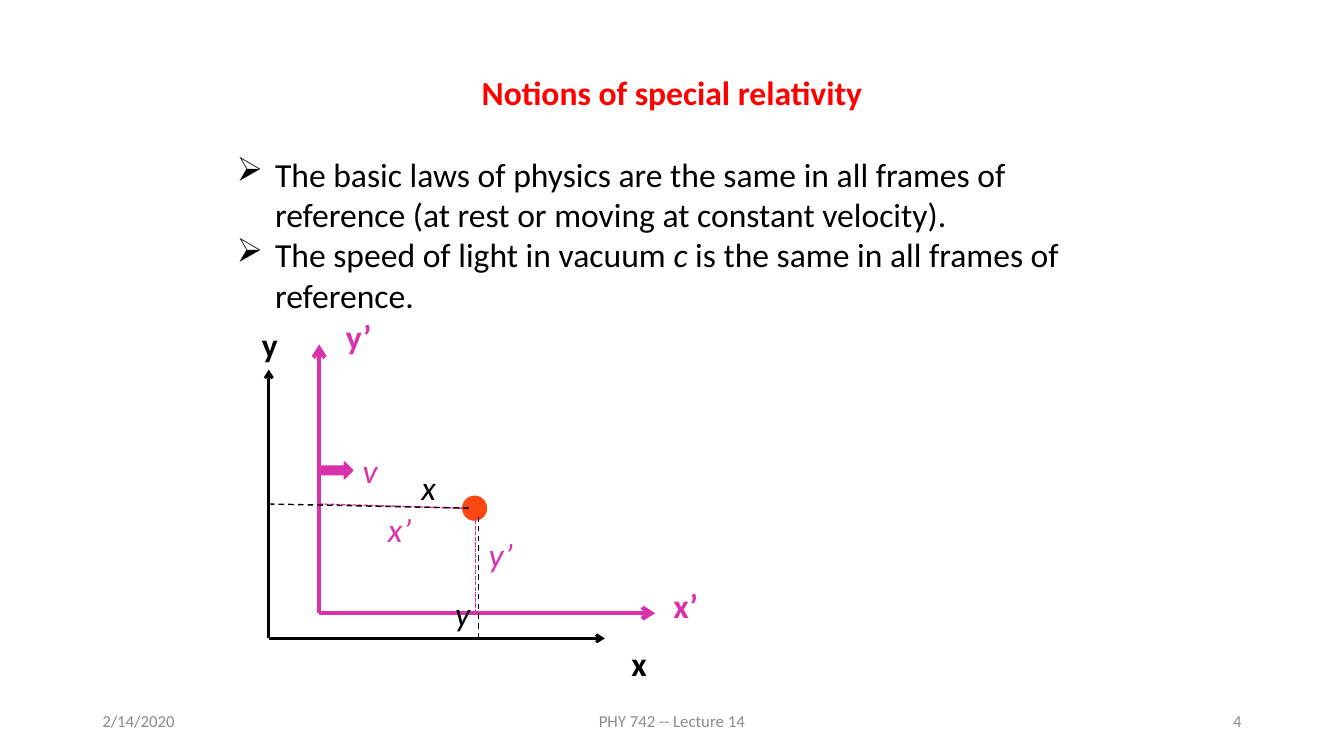
from lxml.etree import SubElement
from pptx import Presentation
from pptx.dml.color import RGBColor
from pptx.enum.dml import MSO_LINE_DASH_STYLE as Dash
from pptx.enum.shapes import MSO_CONNECTOR_TYPE as Connector, MSO_SHAPE as Shape
from pptx.enum.text import MSO_ANCHOR as Anchor, PP_ALIGN as Align
from pptx.oxml.ns import qn
from pptx.util import Inches, Pt

BLACK = RGBColor(0x00, 0x00, 0x00)
RED = RGBColor(0xFF, 0x00, 0x00)
PINK = RGBColor(0xDA, 0x32, 0xAA)
ORANGE = RGBColor(0xFC, 0x48, 0x10)
GRAY = RGBColor(0x8C, 0x8C, 0x8C)

FONT = "Calibri"
COLUMNS_PER_INCH = 12
LABEL_SIZE = 6
FOOTER_ROW = 83.4
FOOTER_HEIGHT = 4.8
INDENT = Inches(0.38)


def grid(*units):
    return [Inches(unit / COLUMNS_PER_INCH) for unit in units]


def add_box(page, left, top, width, height, anchor=Anchor.TOP):
    box = page.shapes.add_textbox(*grid(left, top, width, height))
    box.text_frame.word_wrap = True
    box.text_frame.vertical_anchor = anchor
    return box.text_frame


def add_span(para, text, size=24, color=BLACK, bold=False, italic=False):
    span = para.add_run()
    span.text = text
    span.font.name = FONT
    span.font.size = Pt(size)
    span.font.color.rgb = color
    span.font.bold = bold
    span.font.italic = italic


def add_bullet(frame, *pieces):
    para = frame.add_paragraph()
    properties = para._p.get_or_add_pPr()
    properties.set("marL", str(INDENT))
    properties.set("indent", str(-INDENT))
    SubElement(properties, qn("a:buChar")).set("char", "➢")
    for text, italic in pieces:
        add_span(para, text, italic=italic)


def add_label(page, text, left, top, **style):
    frame = add_box(page, left, top, LABEL_SIZE, LABEL_SIZE)
    add_span(frame.paragraphs[0], text, **style)


def add_footer(page, text, left, width, align):
    frame = add_box(page, left, FOOTER_ROW, width, FOOTER_HEIGHT, Anchor.MIDDLE)
    frame.paragraphs[0].alignment = align
    add_span(frame.paragraphs[0], text, size=12, color=GRAY)


def add_line(page, start, end, color, width=1, dash=None, arrow=False):
    line = page.shapes.add_connector(Connector.STRAIGHT, *grid(*start, *end))
    line.line.color.rgb = color
    line.line.width = Pt(width)
    if dash:
        line.line.dash_style = dash
    if arrow:
        SubElement(line.line._get_or_add_ln(), qn("a:tailEnd")).set("type", "arrow")
    SubElement(line._element.spPr, qn("a:effectLst"))


def add_axes(page, left, bottom, color, width):
    origin = (left, bottom)
    for tip in ((left, bottom - 32), (left + 40, bottom)):
        add_line(page, origin, tip, color, width, arrow=True)


def add_solid(page, kind, left, top, width, height, color, outlined=False):
    solid = page.shapes.add_shape(kind, *grid(left, top, width, height))
    solid.shadow.inherit = False
    solid.fill.solid()
    solid.fill.fore_color.rgb = color
    if outlined:
        solid.line.color.rgb = color
        solid.line.width = Pt(1)
    else:
        solid.line.fill.background()


def add_principles(page):
    frame = add_box(page, 27, 8, 106, 30.2)
    title = frame.paragraphs[0]
    title.alignment = Align.CENTER
    title.space_after = Pt(29.3)
    add_span(title, "Notions of special relativity", color=RED, bold=True)
    add_bullet(frame, ("The basic laws of physics are the same in all frames of "
                       "reference (at rest or moving at constant velocity).", False))
    add_bullet(frame, ("The speed of light in vacuum ", False), ("c", True),
               (" is the same in all frames of reference.", False))


def add_diagram(page):
    add_axes(page, 32, 76, BLACK, 2)
    add_axes(page, 38, 73, PINK, 3)
    add_solid(page, Shape.RIGHT_ARROW, 38, 55, 4, 2, PINK, outlined=True)
    add_solid(page, Shape.OVAL, 55, 59, 3, 3, ORANGE)

    for start, end, color, dash in (
        ((38, 60), (55, 60.5), PINK, Dash.SQUARE_DOT),
        ((56.6, 73), (56.6, 61.5), PINK, Dash.SQUARE_DOT),
        ((57, 76), (57, 61.5), BLACK, Dash.DASH),
        ((32, 60), (56, 60.5), BLACK, Dash.DASH),
    ):
        add_line(page, start, end, color, dash=dash)

    for text, left, top, color in (
        ("x", 74, 76, BLACK), ("y", 30, 38, BLACK),
        ("y’", 40, 37, PINK), ("x’", 79, 69, PINK),
    ):
        add_label(page, text, left, top, color=color, bold=True)

    for text, left, top, color in (
        ("v", 42, 53, PINK), ("x’", 45, 60, PINK), ("y’", 57, 63, PINK),
        ("y", 53, 70, BLACK), ("x", 49, 55, BLACK),
    ):
        add_label(page, text, left, top, color=color, italic=True)


def main():
    deck = Presentation()
    deck.slide_width, deck.slide_height = grid(160, 90)
    page = deck.slides.add_slide(deck.slide_layouts[6])
    add_footer(page, "2/14/2020", 11, 36, Align.LEFT)
    add_footer(page, "PHY 742 -- Lecture 14", 53, 54, Align.CENTER)
    add_footer(page, "4", 113, 36, Align.RIGHT)
    add_principles(page)
    add_diagram(page)
    deck.save("out.pptx")


if __name__ == "__main__":
    main()
